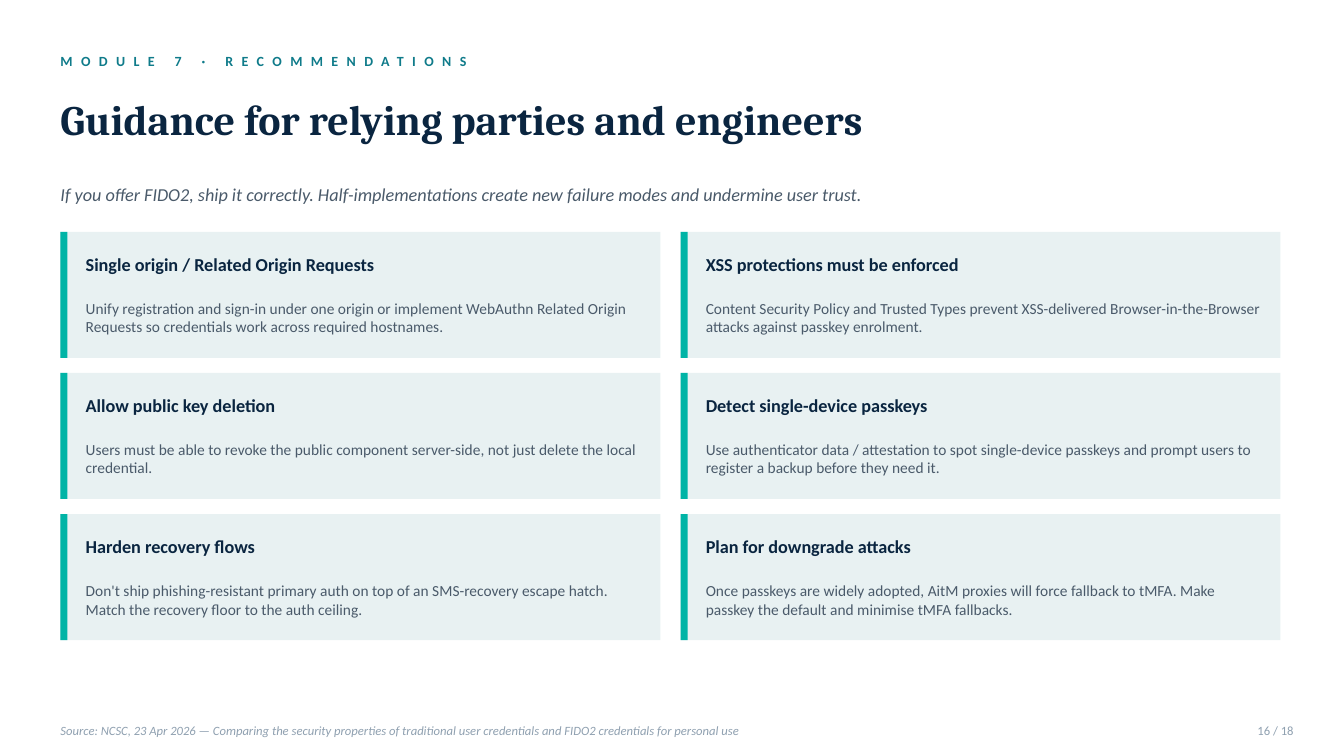
from pptx import Presentation
from pptx.dml.color import RGBColor
from pptx.enum.shapes import MSO_SHAPE
from pptx.enum.text import MSO_ANCHOR, PP_ALIGN
from pptx.util import Inches, Pt

RECT = MSO_SHAPE.RECTANGLE
MIDDLE = MSO_ANCHOR.MIDDLE
LEFT, RIGHT = PP_ALIGN.LEFT, PP_ALIGN.RIGHT

COLORS = {
    "navy": "0A2540",
    "teal": "0F7B8A",
    "accent": "00B4A6",
    "panel": "E8F1F2",
    "body": "4A5A6A",
    "muted": "8FA0B0",
}
FORMATS = {
    "kicker": {"size": Pt(10), "name": "Calibri", "bold": True, "color": "teal"},
    "title": {"size": Pt(30), "name": "Cambria", "bold": True, "color": "navy"},
    "lead": {"size": Pt(13), "name": "Calibri", "italic": True, "color": "body"},
    "heading": {"size": Pt(13), "name": "Calibri", "bold": True, "color": "navy"},
    "body": {"size": Pt(11), "name": "Calibri", "color": "body"},
    "source": {"size": Pt(9), "name": "Calibri", "italic": True, "color": "muted"},
    "page": {"size": Pt(9), "name": "Calibri", "color": "muted"},
}
CARDS = [
    ("Single origin / Related Origin Requests",
     "Unify registration and sign-in under one origin or implement WebAuthn Related "
     "Origin Requests so credentials work across required hostnames."),
    ("XSS protections must be enforced",
     "Content Security Policy and Trusted Types prevent XSS-delivered "
     "Browser-in-the-Browser attacks against passkey enrolment."),
    ("Allow public key deletion",
     "Users must be able to revoke the public component server-side, not just delete "
     "the local credential."),
    ("Detect single-device passkeys",
     "Use authenticator data / attestation to spot single-device passkeys and prompt "
     "users to register a backup before they need it."),
    ("Harden recovery flows",
     "Don't ship phishing-resistant primary auth on top of an SMS-recovery escape "
     "hatch. Match the recovery floor to the auth ceiling."),
    ("Plan for downgrade attacks",
     "Once passkeys are widely adopted, AitM proxies will force fallback to tMFA. Make "
     "passkey the default and minimise tMFA fallbacks."),
]

CELL = Inches(0.1)
MARGIN = 6
CARD_TOP, CARD_W, CARD_H = 23, 59.5, 12.5
GAP_X, GAP_Y = 2, 1.5
BAR_W, INSET, TEXT_W = 0.7, 2.5, 55.5


class Deck:
    def __init__(self):
        self.prs = Presentation()
        self.prs.slide_width = Inches(13.33)
        self.prs.slide_height = Inches(7.5)
        self.s = self.prs.slides.add_slide(self.prs.slide_layouts[6])

    def box(self, *cells):
        return [round(n * CELL) for n in cells]

    def color(self, name):
        return RGBColor.from_string(COLORS[name])

    def rect(self, x, y, w, h, fill):
        sp = self.s.shapes.add_shape(RECT, *self.box(x, y, w, h))
        sp.shadow.inherit = False
        sp.fill.solid()
        sp.fill.fore_color.rgb = self.color(fill)
        sp.line.fill.background()

    def text(self, x, y, w, h, text, style, align=LEFT, spacing=0):
        tf = self.s.shapes.add_textbox(*self.box(x, y, w, h)).text_frame
        frame = {"word_wrap": True, "vertical_anchor": MIDDLE, "margin_left": 0,
                 "margin_right": 0, "margin_top": 0, "margin_bottom": 0}
        for key, value in frame.items():
            setattr(tf, key, value)
        p = tf.paragraphs[0]
        p.alignment = align
        r = p.add_run()
        r.text = text
        for key, value in FORMATS[style].items():
            if key == "color":
                r.font.color.rgb = self.color(value)
            else:
                setattr(r.font, key, value)
        if spacing:
            r._r.get_or_add_rPr().set("spc", str(spacing * 100))

    def card(self, col, row, heading, body):
        x = MARGIN + col * (CARD_W + GAP_X)
        y = CARD_TOP + row * (CARD_H + GAP_Y)
        self.rect(x, y, CARD_W, CARD_H, "panel")
        self.rect(x, y, BAR_W, CARD_H, "accent")
        self.text(x + INSET, y + 1.2, TEXT_W, 4, heading, "heading")
        self.text(x + INSET, y + 5, TEXT_W, 7, body, "body")


def main():
    deck = Deck()
    deck.text(MARGIN, 4.5, 120, 3, "MODULE 7 · RECOMMENDATIONS", "kicker", spacing=6)
    deck.text(MARGIN, 7.5, 121, 8.5, "Guidance for relying parties and engineers", "title")
    deck.text(MARGIN, 17, 120, 4.5,
              "If you offer FIDO2, ship it correctly. Half-implementations create new "
              "failure modes and undermine user trust.", "lead")
    for i, (heading, body) in enumerate(CARDS):
        row, col = divmod(i, 2)
        deck.card(col, row, heading, body)
    deck.text(MARGIN, 71, 105, 3,
              "Source: NCSC, 23 Apr 2026 — Comparing the security properties of "
              "traditional user credentials and FIDO2 credentials for personal use", "source")
    deck.text(122.3, 71, 6, 3, "16 / 18", "page", RIGHT)
    deck.prs.save("out.pptx")


if __name__ == "__main__":
    main()
